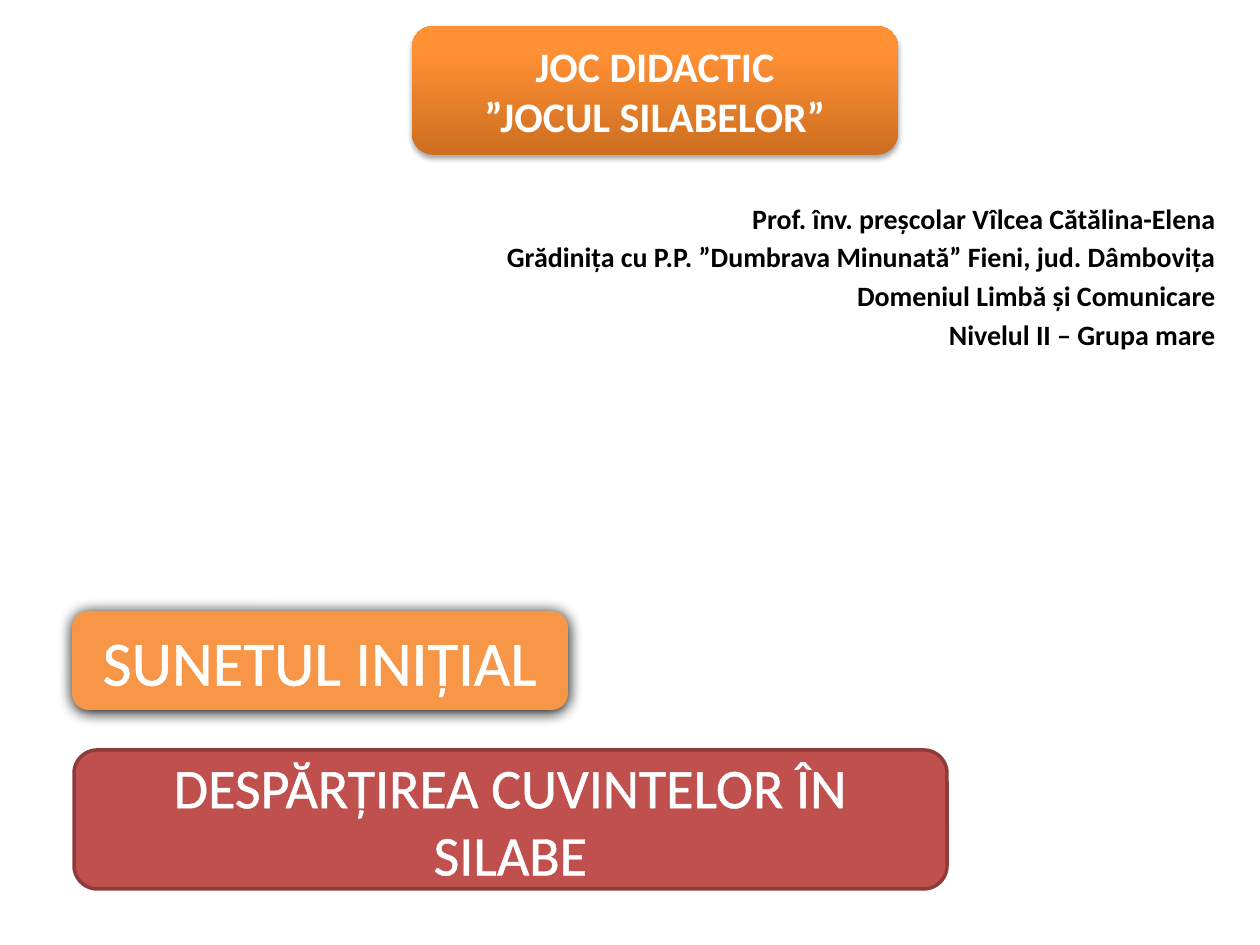
from copy import deepcopy

from lxml import etree
from pptx import Presentation
from pptx.dml.color import RGBColor
from pptx.enum.shapes import MSO_SHAPE
from pptx.enum.text import MSO_ANCHOR, PP_ALIGN
from pptx.oxml.ns import qn
from pptx.util import Emu, Pt

ROUNDED = MSO_SHAPE.ROUNDED_RECTANGLE
MIDDLE = MSO_ANCHOR.MIDDLE
CENTER, RIGHT = PP_ALIGN.CENTER, PP_ALIGN.RIGHT

PX_PER_INCH = 126
FONT = "Calibri"
COLORS = {
    "white": "FFFFFF", "black": "000000",
    "orange": "F79646", "red": "C0504D", "dark_red": "8E3B39",
    "grad_low": "CC6E20", "grad_mid": "FF9034", "grad_high": "FF9136",
}


def px(value):
    return Emu(round(value * 914400 / PX_PER_INCH))


def rgb(name):
    return RGBColor.from_string(COLORS[name])


def add_xml_color(parent, name):
    return etree.SubElement(parent, qn("a:srgbClr"), val=COLORS[name])


class SlideBuilder:
    def __init__(self, slide):
        self.slide = slide

    def set_lines(self, frame, lines, size, color, align, bold=False, gap=0):
        frame.word_wrap = True
        frame.text = "\n".join(lines)
        for index, paragraph in enumerate(frame.paragraphs):
            paragraph.alignment = align
            if index and gap:
                paragraph.space_before = Pt(gap)
            for run in paragraph.runs:
                run.font.name = FONT
                run.font.size = Pt(size)
                run.font.bold = bold
                run.font.color.rgb = rgb(color)

    def banner(self, box, lines, size, fill=None, border=None, bold=False):
        shape = self.slide.shapes.add_shape(ROUNDED, *map(px, box))
        shape.shadow.inherit = False
        if fill:
            shape.fill.solid()
            shape.fill.fore_color.rgb = rgb(fill)
        if border:
            shape.line.color.rgb = rgb(border)
            shape.line.width = Pt(2)
        else:
            shape.line.fill.background()
        shape.text_frame.vertical_anchor = MIDDLE
        self.set_lines(shape.text_frame, lines, size, "white", CENTER, bold)
        return shape

    def gradient(self, shape, stops):
        """Fill upwards with (position, colour) stops."""
        shape.fill.gradient()
        shape.fill.gradient_angle = 90
        stop_list = shape._element.spPr.find(".//" + qn("a:gsLst"))
        while len(stop_list) < len(stops):
            stop_list.append(deepcopy(stop_list[-1]))
        for stop, (position, color) in zip(shape.fill.gradient_stops, stops):
            stop.position = position
            stop.color.rgb = rgb(color)

    def shadow(self, shape, opacity, blur, distance):
        effects = shape._element.spPr.find(qn("a:effectLst"))
        outer = etree.SubElement(
            effects, qn("a:outerShdw"), blurRad=str(int(Pt(blur))),
            dist=str(int(Pt(distance))), dir="5400000", rotWithShape="0")
        color = add_xml_color(outer, "black")
        etree.SubElement(color, qn("a:alpha"), val=str(opacity * 1000))

    def outline_text(self, shape):
        for paragraph in shape.text_frame.paragraphs:
            for run in paragraph.runs:
                line = etree.Element(qn("a:ln"), w=str(int(Pt(1.45))))
                add_xml_color(etree.SubElement(line, qn("a:solidFill")), "white")
                run._r.get_or_add_rPr().insert(0, line)

    def text(self, box, lines, size, color, align, bold, gap):
        frame = self.slide.shapes.add_textbox(*map(px, box)).text_frame
        self.set_lines(frame, lines, size, color, align, bold, gap)


def main():
    deck = Presentation()
    deck.slide_width, deck.slide_height = px(1260), px(945)
    builder = SlideBuilder(deck.slides.add_slide(deck.slide_layouts[6]))

    # Game topics
    sound = builder.banner((72, 611, 496, 99), ["SUNETUL INIȚIAL"], 36, "orange")
    builder.shadow(sound, opacity=100, blur=8.5, distance=1)
    builder.outline_text(sound)

    syllables = builder.banner((74, 750, 873, 139),
                               ["DESPĂRȚIREA CUVINTELOR ÎN SILABE"],
                               32, "red", border="dark_red")
    builder.outline_text(syllables)

    # Title
    title = builder.banner((412, 26, 486, 129),
                           ["JOC DIDACTIC", "”JOCUL SILABELOR”"], 24, bold=True)
    builder.gradient(title, [(0, "grad_low"), (0.8, "grad_mid"), (1, "grad_high")])
    builder.shadow(title, opacity=35, blur=3.1, distance=1.8)

    # Author and class
    builder.text((491, 195, 737, 242), [
        "Prof. înv. preșcolar Vîlcea Cătălina-Elena",
        "Grădinița cu P.P. ”Dumbrava Minunată” Fieni, jud. Dâmbovița",
        "Domeniul Limbă și Comunicare",
        "Nivelul II – Grupa mare",
    ], 16, "black", RIGHT, bold=True, gap=3)

    deck.save("out.pptx")


if __name__ == "__main__":
    main()
